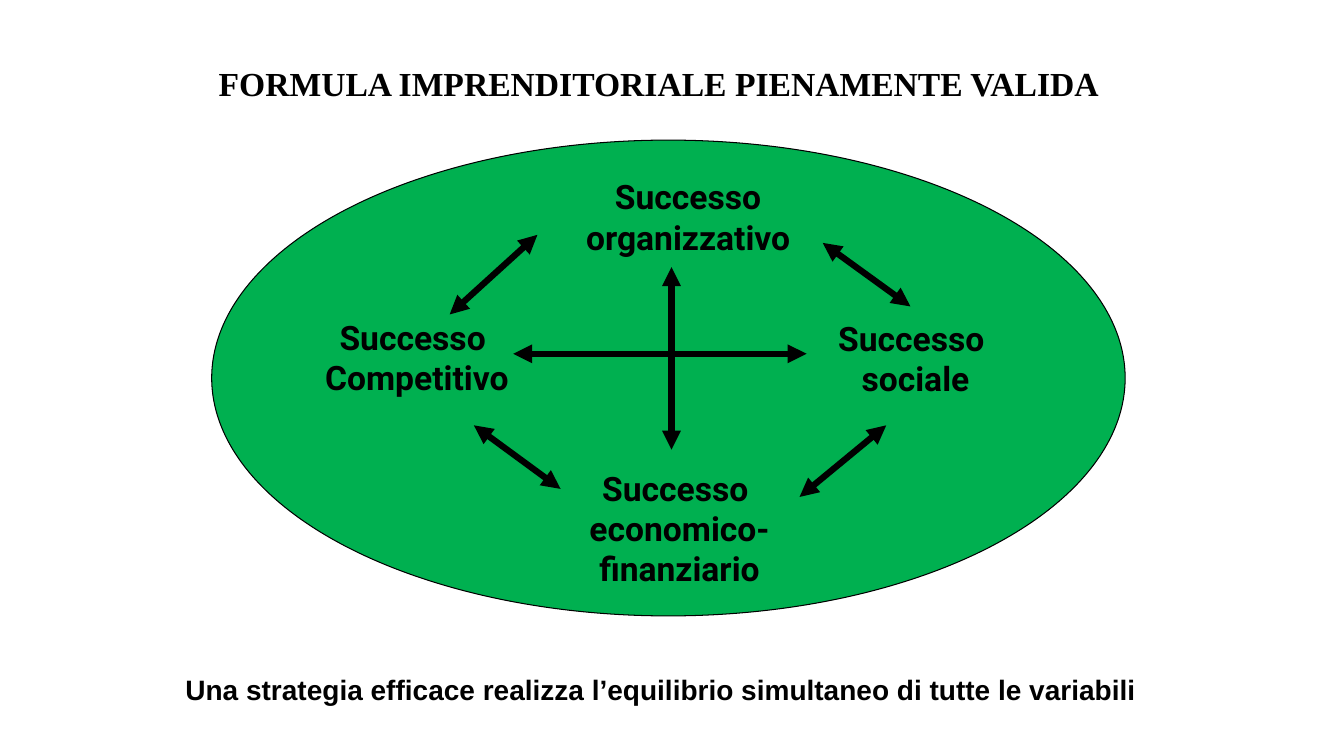
from dataclasses import dataclass

from lxml import etree
from pptx import Presentation
from pptx.dml.color import RGBColor
from pptx.enum import shapes, text
from pptx.oxml import ns
from pptx.util import Inches, Pt


@dataclass(frozen=True)
class Theme:
    ink: RGBColor = RGBColor(0, 0, 0)
    green: RGBColor = RGBColor(0x00, 0xB0, 0x50)
    serif: str = "Times New Roman"
    sans: str = "Arial"
    label: str = "Roboto"
    large: int = 24
    small: int = 20
    thin: float = 0.75
    thick: float = 4.5


class Painter:
    def __init__(self, slide, theme):
        self.slide = slide
        self.theme = theme

    def oval(self, *box):
        oval = self.slide.shapes.add_shape(
            shapes.MSO_SHAPE.OVAL, *map(Inches, box))
        oval.shadow.inherit = False
        oval.fill.solid()
        oval.fill.fore_color.rgb = self.theme.green
        oval.line.color.rgb = self.theme.ink
        oval.line.width = Pt(self.theme.thin)

    def words(self, box, lines, font, size, align, wrap=True, pad=(0.1, 0.05)):
        frame = self.slide.shapes.add_textbox(*map(Inches, box)).text_frame
        frame.word_wrap = wrap
        frame.margin_left = frame.margin_right = Inches(pad[0])
        frame.margin_top = frame.margin_bottom = Inches(pad[1])
        frame.text = "\n".join(lines)
        for para in frame.paragraphs:
            para.alignment = align
            para.font.name = font
            para.font.size = Pt(size)
            para.font.bold = True
            para.font.color.rgb = self.theme.ink

    def label(self, box, lines, wrap=True, pad=(0.08, 0.04)):
        self.words(box, lines, self.theme.label, self.theme.large,
                   text.PP_ALIGN.CENTER, wrap, pad)

    def arrow(self, *ends):
        arrow = self.slide.shapes.add_connector(
            shapes.MSO_CONNECTOR.STRAIGHT, *map(Inches, ends))
        arrow.line.color.rgb = self.theme.ink
        arrow.line.width = Pt(self.theme.thick)
        props = arrow._element.spPr
        line = props.find(ns.qn("a:ln"))
        for tip in ("a:headEnd", "a:tailEnd"):
            etree.SubElement(line, ns.qn(tip), type="triangle")
        etree.SubElement(props, ns.qn("a:effectLst"))


def main():
    deck = Presentation()
    deck.slide_width, deck.slide_height = Inches(13.33), Inches(7.5)
    theme = Theme()
    paint = Painter(deck.slides.add_slide(deck.slide_layouts[6]), theme)
    left = text.PP_ALIGN.LEFT

    paint.words((2.07, 0.58, 9.02, 0.5),
                ["FORMULA IMPRENDITORIALE PIENAMENTE VALIDA"],
                theme.serif, theme.large, left, wrap=False)
    paint.oval(2.1, 1.39, 9.06, 4.72)

    paint.label((3.03, 3.1, 2.21, 0.89), ["Successo ", "Competitivo"], wrap=False)
    paint.label((5.56, 4.6, 2.36, 1.29), ["Successo ", "economico-finanziario"])
    paint.label((8.18, 3.11, 1.8, 0.89), ["Successo ", "sociale"], wrap=False)
    paint.label((5.09, 1.7, 3.47, 0.91), ["Successo organizzativo"],
                pad=(0.1, 0.05))

    for ends in (
        (5.09, 3.51, 8, 3.51),
        (6.66, 2.65, 6.66, 4.46),
        (4.46, 3.12, 5.33, 2.33),
        (4.7, 4.22, 5.56, 4.85),
        (7.93, 4.93, 8.79, 4.22),
        (8.16, 2.41, 9.03, 3.04),
    ):
        paint.arrow(*ends)

    paint.words((1.74, 6.62, 9.84, 0.44),
                ["Una strategia efficace realizza l’equilibrio simultaneo "
                 "di tutte le variabili"],
                theme.sans, theme.small, left)
    deck.save("out.pptx")


if __name__ == "__main__":
    main()
